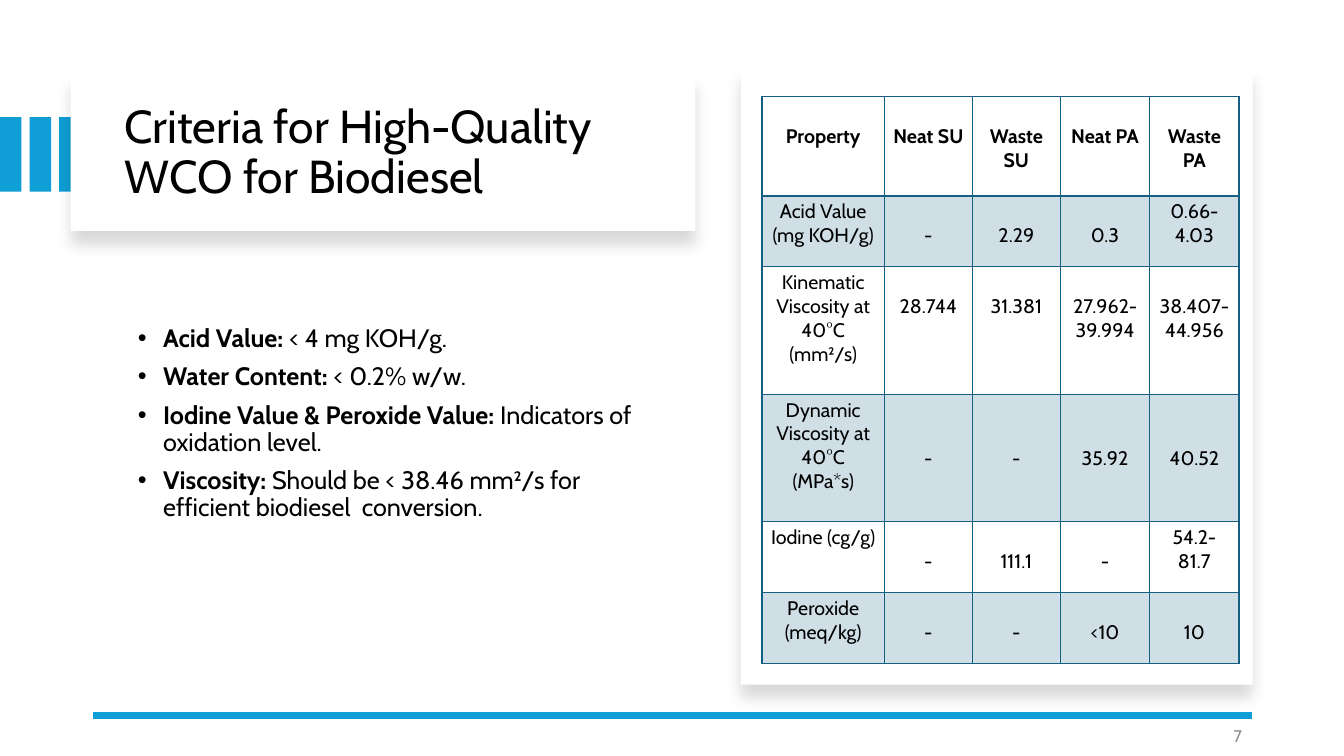
from lxml import etree
from pptx import Presentation
from pptx.dml.color import RGBColor
from pptx.enum.shapes import MSO_CONNECTOR, MSO_SHAPE
from pptx.enum.text import MSO_ANCHOR, PP_ALIGN
from pptx.oxml.ns import qn
from pptx.util import Inches, Pt

RECT = MSO_SHAPE.RECTANGLE
LINE = MSO_CONNECTOR.STRAIGHT
TOP, MID = MSO_ANCHOR.TOP, MSO_ANCHOR.MIDDLE
LEFT, CENTER, RIGHT = PP_ALIGN.LEFT, PP_ALIGN.CENTER, PP_ALIGN.RIGHT

WIDTH, HEIGHT = Inches(13.33), Inches(7.5)
COL, ROW = WIDTH / 100, HEIGHT / 100
FONT = "Cabin"
HEX = {"blue": "0F9ED5", "teal": "156082", "white": "FFFFFF",
       "black": "000000", "grey": "8C8C8C"}

TITLE = "Criteria for High-Quality WCO for Biodiesel"
POINTS = [
    ("Acid Value: ", "< 4 mg KOH/g."),
    ("Water Content: ", "< 0.2% w/w."),
    ("Iodine Value & Peroxide Value: ", "Indicators of oxidation level."),
    ("Viscosity:", " Should be < 38.46 mm²/s for efficient biodiesel  conversion."),
]
COLS = [9.1, 6.55, 6.55, 6.65, 6.65]
ROWS = [
    (13.1, (1, 1, 1, 1, 1),
     ("Property", "Neat SU", "Waste SU", "Neat PA", "Waste PA")),
    (9.4, (0, 1, 1, 1, 0),
     ("Acid Value (mg KOH/g)", "-", "2.29", "0.3", "0.66-4.03")),
    (16.85, (0, 1, 1, 1, 1),
     ("Kinematic Viscosity at 40°C (mm²/s)", "28.744", "31.381",
      "27.962-39.994", "38.407-44.956")),
    (16.85, (0, 2, 2, 2, 2),
     ("Dynamic Viscosity at 40°C (MPa*s)", "-", "-", "35.92", "40.52")),
    (9.4, (0, 1, 1, 1, 0),
     ("Iodine (cg/g)", "-", "111.1", "-", "54.2-81.7")),
    (9.4, (0, 1, 1, 1, 1),
     ("Peroxide (meq/kg)", "-", "-", "<10", "10")),
]


def grid(x, y, w, h):
    return [round(n) for n in (x * COL, y * ROW, w * COL, h * ROW)]


def rgb(name):
    return RGBColor.from_string(HEX[name])


def apply(item, form):
    for key, value in form.items():
        setattr(item, key, value)


def node(home, tag, **attrs):
    return etree.SubElement(home, qn(tag), attrs)


def tint(home, name, alpha):
    color = node(home, "a:srgbClr", val=HEX[name])
    node(color, "a:alpha", val=str(alpha * 1000))


def write(par, text, size, color="black", bold=False):
    run = par.add_run()
    run.text = text
    apply(run.font, {"name": FONT, "size": Pt(size), "bold": bold})
    run.font.color.rgb = rgb(color)


def block(slide, place, color):
    shape = slide.shapes.add_shape(RECT, *grid(*place))
    shape.shadow.inherit = False
    shape.fill.solid()
    shape.fill.fore_color.rgb = rgb(color)
    shape.line.fill.background()
    return shape


def card(slide, place):
    shape = block(slide, place, "white")
    effect = shape._element.spPr.find(qn("a:effectLst"))
    shade = node(effect, "a:outerShdw", blurRad=str(Pt(11)), dist=str(Pt(10)),
                 dir="5400000", algn="t", rotWithShape="0")
    tint(shade, "black", 15)


def frame(slide, place, anchor):
    text = slide.shapes.add_textbox(*grid(*place)).text_frame
    apply(text, {"word_wrap": True, "vertical_anchor": anchor})
    return text


def label(slide, place, text, size, color, form):
    par = frame(slide, place, MID).paragraphs[0]
    apply(par, form)
    write(par, text, size, color)


def bullets(slide, place, points):
    text = frame(slide, place, TOP)
    for i, (head, tail) in enumerate(points):
        par = text.add_paragraph() if i else text.paragraphs[0]
        apply(par, {"alignment": LEFT, "line_spacing": 0.9, "space_after": Pt(8)})
        props = par._p.get_or_add_pPr()
        props.set("marL", str(Inches(0.38)))
        props.set("indent", str(Inches(-0.25)))
        node(props, "a:buFont", typeface="Arial")
        node(props, "a:buChar", char="•")
        write(par, head, 18, bold=True)
        write(par, tail, 18)


def rule(slide, start, end, y):
    line = slide.shapes.add_connector(
        LINE, round(start * COL), round(y * ROW), round(end * COL), round(y * ROW))
    line.line.color.rgb = rgb("blue")
    line.line.width = Pt(4.5)
    node(line._element.spPr, "a:effectLst")


def edges(props, widths):
    for side, width in zip("LRTB", widths):
        line = node(props, "a:ln" + side, w=str(Pt(width)))
        node(node(line, "a:solidFill"), "a:srgbClr", val=HEX["teal"])


def cell_at(table, r, c, text, pad):
    cell = table.cell(r, c)
    apply(cell, {"margin_left": Inches(0.07), "margin_right": Inches(0.07),
                 "margin_top": Inches(0.04 + 0.24 * pad),
                 "margin_bottom": Inches(0.04), "vertical_anchor": TOP})
    props = cell._tc.get_or_add_tcPr()
    edges(props, (1, 1, 2 if r == 1 else 1, 2 if r == 0 else 1))
    if r % 2:
        tint(node(props, "a:solidFill"), "teal", 20)
    else:
        cell.fill.background()
    par = cell.text_frame.paragraphs[0]
    par.alignment = CENTER
    write(par, text, 14, bold=r == 0)


def data(slide, x, y):
    high = sum(row[0] for row in ROWS)
    table = slide.shapes.add_table(
        len(ROWS), len(COLS), *grid(x, y, sum(COLS), high)).table
    apply(table, {"first_row": False, "horz_banding": False})
    for c, wide in enumerate(COLS):
        table.columns[c].width = round(wide * COL)
    for r, (high, pads, texts) in enumerate(ROWS):
        table.rows[r].height = round(high * ROW)
        for c, (text, pad) in enumerate(zip(texts, pads)):
            cell_at(table, r, c, text, pad)


def main():
    deck = Presentation()
    apply(deck, {"slide_width": WIDTH, "slide_height": HEIGHT})
    slide = deck.slides.add_slide(deck.slide_layouts[6])
    for i in range(3):
        block(slide, (2.2 * i, 15.5, 1.6, 9.85), "blue")
    card(slide, (5.25, 9.6, 46.5, 20.95))
    label(slide, (8.55, 12.8, 41.5, 15.05), TITLE, 33, "black",
          {"alignment": LEFT, "line_spacing": 0.9})
    bullets(slide, (8.55, 42.4, 40.95, 29.3), POINTS)
    card(slide, (55.15, 8.95, 38.05, 81.6))
    rule(slide, 93.15, 6.9, 94.65)
    label(slide, (70.65, 94.65, 22.5, 5.35), "7", 12, "grey",
          {"alignment": RIGHT, "space_after": Pt(6)})
    data(slide, 56.7, 12.8)
    deck.save("out.pptx")


if __name__ == "__main__":
    main()
